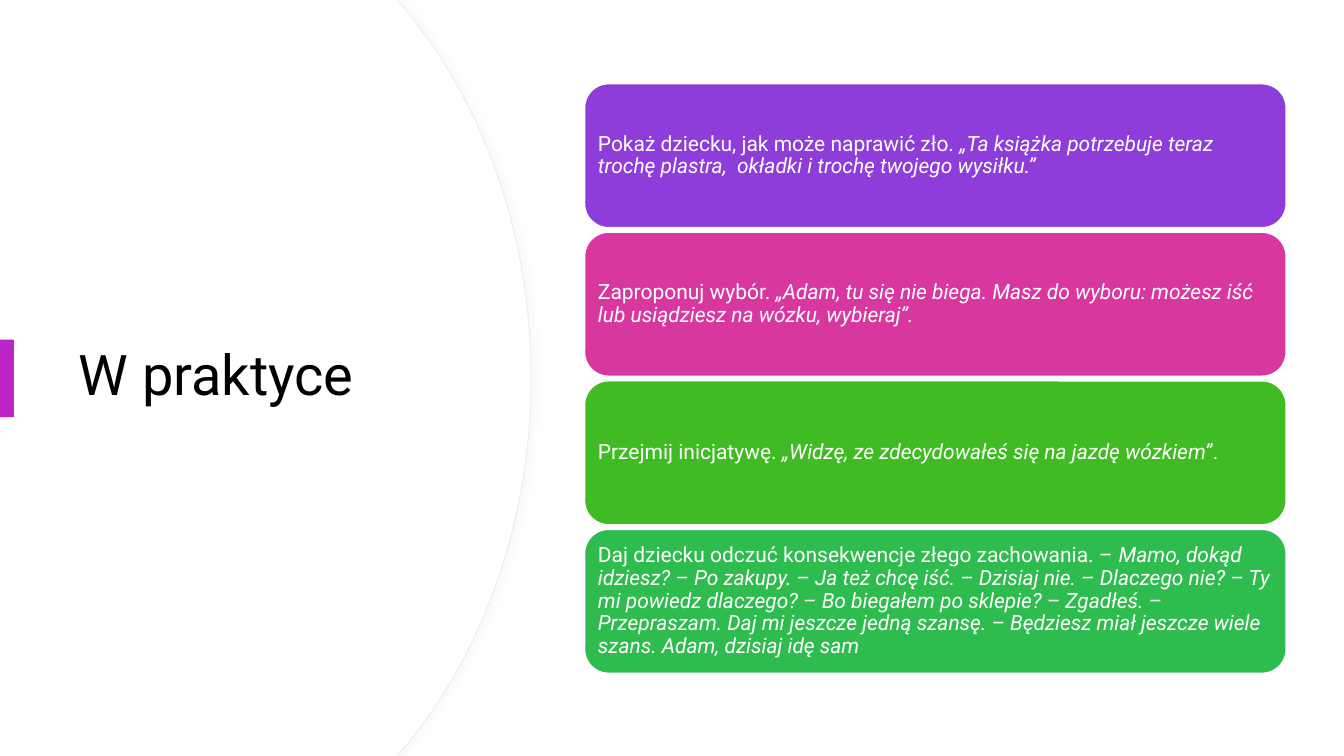
from lxml import etree
from pptx import Presentation
from pptx.dml.color import RGBColor
from pptx.enum.shapes import MSO_SHAPE
from pptx.enum.text import MSO_ANCHOR, MSO_AUTO_SIZE, PP_ALIGN
from pptx.oxml.ns import qn
from pptx.util import Pt

RECTANGLE = MSO_SHAPE.RECTANGLE
ROUNDED = MSO_SHAPE.ROUNDED_RECTANGLE
MIDDLE = MSO_ANCHOR.MIDDLE
LEFT = PP_ALIGN.LEFT
NO_AUTOFIT = MSO_AUTO_SIZE.NONE

WHITE = RGBColor(0xFF, 0xFF, 0xFF)
BLACK = RGBColor(0x00, 0x00, 0x00)
PALE = RGBColor(0xE9, 0xF0, 0xE5)
SHADOW = RGBColor(0xD9, 0xD9, 0xD9)
MAGENTA = RGBColor(0xBD, 0x25, 0xC7)
VIOLET = RGBColor(0x8E, 0x3C, 0xDA)
PINK = RGBColor(0xD9, 0x37, 0xA0)
LIME = RGBColor(0x40, 0xBB, 0x23)
GREEN = RGBColor(0x2F, 0xBC, 0x4E)

FONT = "Roboto"
SLIDE_WIDTH, SLIDE_HEIGHT = 960, 540
CARD_LEFT, CARD_TOP, CARD_WIDTH, CARD_HEIGHT = 417.6, 59.8, 501.1, 102.8
CARD_PITCH = 106.1
CARD_INSET = 4.5

# Each card: fill, then runs as (text, italic)
CARDS = [
    (VIOLET, [
        ("Pokaż dziecku, jak może naprawić zło.", False),
        (" „Ta książka potrzebuje teraz trochę plastra,  okładki i trochę "
         "twojego wysiłku.”", True)]),
    (PINK, [
        ("Zaproponuj wybór. ", False),
        ("„Adam, tu się nie biega. Masz do wyboru: możesz iść lub usiądziesz "
         "na wózku, wybieraj”.", True)]),
    (LIME, [
        ("Przejmij inicjatywę. ", False),
        ("„Widzę, ze zdecydowałeś się na jazdę wózkiem”", True),
        (".", False)]),
    (GREEN, [
        ("Daj dziecku odczuć konsekwencje złego zachowania. –", False),
        (" Mamo, dokąd idziesz? – Po zakupy. – Ja też chcę iść. – Dzisiaj "
         "nie. – Dlaczego nie? – Ty mi powiedz dlaczego? – Bo biegałem po "
         "sklepie? – Zgadłeś. – Przepraszam. Daj mi jeszcze jedną szansę. – "
         "Będziesz miał jeszcze wiele szans. Adam, dzisiaj idę sam", True)]),
]


def add_run(paragraph, text, size, color, italic=False):
    run = paragraph.add_run()
    run.text = text
    run.font.name = FONT
    run.font.size = Pt(size)
    run.font.italic = italic
    run.font.color.rgb = color


def set_fill(shape, color):
    shape.shadow.inherit = False
    shape.fill.solid()
    shape.fill.fore_color.rgb = color
    shape.line.fill.background()


def set_outline(shape, color, width):
    shape.line.color.rgb = color
    shape.line.width = Pt(width)


def add_soft_shadow(shape):
    effects = shape.element.spPr.find(qn("a:effectLst"))
    shadow = etree.SubElement(effects, qn("a:outerShdw"), blurRad=str(Pt(4)),
                              dist=str(Pt(3)), dir="0", algn="l", rotWithShape="0")
    color = etree.SubElement(shadow, qn("a:srgbClr"), val=str(SHADOW))
    etree.SubElement(color, qn("a:alpha"), val="15000")


def bend(segment, controls):
    """Turn a straight segment into a cubic curve with the same end."""
    segment.tag = qn("a:cubicBezTo")
    for position, (x, y) in enumerate(controls):
        point = etree.Element(qn("a:pt"), x=str(Pt(x)), y=str(Pt(y)))
        segment.insert(position, point)


def add_curved_panel(slide, right):
    corner, shoulder = right - 95.7, right - 90.7
    outline = [(corner, 0), (shoulder, 5.8), (right, SLIDE_HEIGHT / 2),
               (shoulder, SLIDE_HEIGHT - 5.8), (corner, SLIDE_HEIGHT), (0, SLIDE_HEIGHT)]
    builder = slide.shapes.build_freeform(0, 0)
    builder.add_line_segments([(Pt(x), Pt(y)) for x, y in outline], close=True)
    panel = builder.convert_to_shape()
    # The lower arc mirrors the upper one
    upper = [(right - 34.5, 73.4), (right, 167)]
    lower = [(x, SLIDE_HEIGHT - y) for x, y in reversed(upper)]
    segments = list(panel.element.spPr.iter(qn("a:lnTo")))
    bend(segments[2], upper)
    bend(segments[3], lower)
    set_fill(panel, WHITE)
    return panel


def add_box(slide, preset, left, top, width, height, color):
    box = slide.shapes.add_shape(preset, Pt(left), Pt(top), Pt(width), Pt(height))
    set_fill(box, color)
    return box


def add_card(slide, top, color, runs):
    card = add_box(slide, ROUNDED, CARD_LEFT, top, CARD_WIDTH, CARD_HEIGHT, color)
    set_outline(card, WHITE, 1)
    frame = card.text_frame
    frame.word_wrap = True
    frame.vertical_anchor = MIDDLE
    frame.margin_left = frame.margin_right = Pt(CARD_INSET)
    frame.margin_top = frame.margin_bottom = Pt(CARD_INSET)
    paragraph = frame.paragraphs[0]
    paragraph.alignment = LEFT
    paragraph.line_spacing = 0.9
    for text, italic in runs:
        add_run(paragraph, text, 15, WHITE, italic)


def set_title(slide, text):
    title = slide.shapes.title
    title.left, title.top, title.width, title.height = Pt(49), Pt(91.4), Pt(283.7), Pt(356.4)
    frame = title.text_frame
    frame.word_wrap = True
    frame.auto_size = NO_AUTOFIT
    frame.vertical_anchor = MIDDLE
    paragraph = frame.paragraphs[0]
    paragraph.alignment = LEFT
    paragraph.line_spacing = 0.9
    add_run(paragraph, text, 40, BLACK)
    # Bring the title in front of the panel
    title.element.getparent().append(title.element)


def main():
    presentation = Presentation()
    presentation.slide_width = Pt(SLIDE_WIDTH)
    presentation.slide_height = Pt(SLIDE_HEIGHT)
    slide = presentation.slides.add_slide(presentation.slide_layouts[5])

    # Curved panel: outlined back layer, plain front layer
    back_panel = add_curved_panel(slide, 379.4)
    set_outline(back_panel, PALE, 0.75)
    add_soft_shadow(back_panel)
    add_curved_panel(slide, 378.7)

    # Title with its accent bar
    set_title(slide, "W praktyce")
    add_box(slide, RECTANGLE, 0, 242.6, 10, 55.4, MAGENTA)

    # Column of advice cards
    for index, (color, runs) in enumerate(CARDS):
        add_card(slide, CARD_TOP + index * CARD_PITCH, color, runs)

    presentation.save("out.pptx")


if __name__ == "__main__":
    main()
